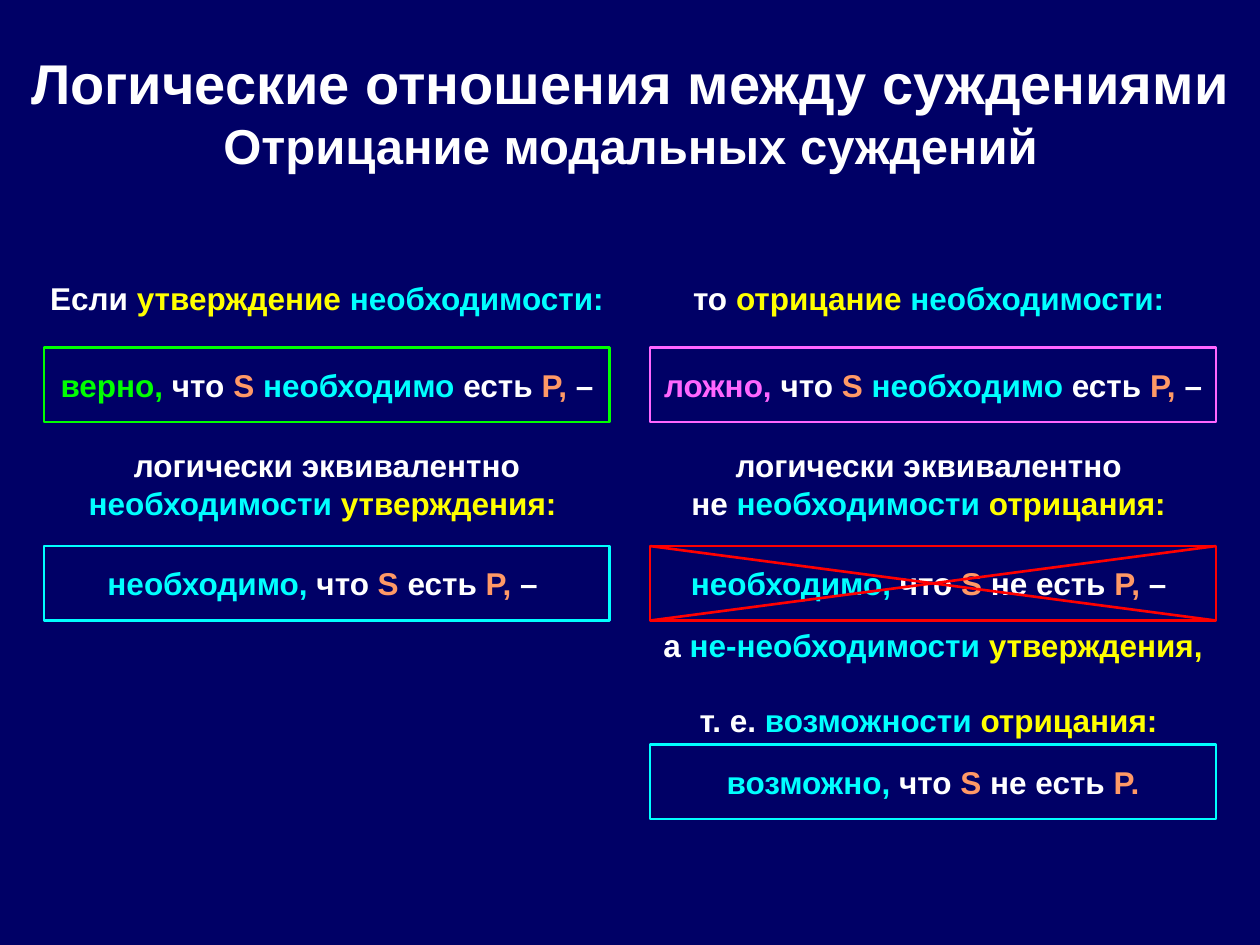
from dataclasses import dataclass
from itertools import accumulate
from typing import NamedTuple, Optional

from lxml import etree
from pptx import Presentation
from pptx.dml.color import RGBColor
from pptx.enum import shapes, text
from pptx.oxml import ns
from pptx.util import Inches, Pt

NAVY = RGBColor(0x00, 0x00, 0x66)
WHITE = RGBColor(0xFF, 0xFF, 0xFF)
YELLOW = RGBColor(0xFF, 0xFF, 0x00)
CYAN = RGBColor(0x00, 0xFF, 0xFF)
GREEN = RGBColor(0x00, 0xFF, 0x00)
PINK = RGBColor(0xFF, 0x66, 0xFF)
ORANGE = RGBColor(0xFF, 0x99, 0x66)
RED = RGBColor(0xFF, 0x00, 0x00)

COLUMN_LEFTS = (0.35, 5.16)
COLUMN_WIDTH = 4.49
GRID_TOP = 1.97
ROW_UNIT = 0.197
ROW_HEIGHTS = [units * ROW_UNIT for units in (4, 3, 5, 3, 5, 3)]
ROW_TOPS = list(accumulate(ROW_HEIGHTS, initial=GRID_TOP))


class Span(NamedTuple):
    text: str
    color: RGBColor
    size: Optional[int] = None


class Area(NamedTuple):
    left: float
    top: float
    width: float
    height: float


@dataclass(frozen=True)
class Cell:
    column: int
    row: int
    spans: tuple[Span, ...]
    border: Optional[RGBColor] = None
    bleed: float = 0
    crossed: bool = False

    @property
    def area(self) -> Area:
        return Area(COLUMN_LEFTS[self.column] - self.bleed, ROW_TOPS[self.row],
                    COLUMN_WIDTH + 2 * self.bleed, ROW_HEIGHTS[self.row])


def necessity(verdict: str, color: RGBColor) -> tuple[Span, ...]:
    return (Span(verdict, color), Span(" что ", WHITE), Span("S", ORANGE),
            Span(" необходимо ", CYAN), Span("есть ", WHITE),
            Span("P, ", ORANGE), Span("–", WHITE))


def modality(mode: str, link: str, predicate: str, ending: str = "") -> tuple[Span, ...]:
    spans = (Span(mode, CYAN), Span("что", WHITE), Span(" S ", ORANGE),
             Span(link, WHITE), Span(predicate, ORANGE))
    return spans + ((Span(ending, WHITE),) if ending else ())


TITLE = (Span("Логические отношения между суждениями\n", WHITE, 32),
         Span("Отрицание модальных суждений", WHITE, 28))

CELLS = (
    Cell(0, 0, (Span("Если ", WHITE), Span("утверждение ", YELLOW),
                Span("необходимости: ", CYAN)), bleed=0.08),
    Cell(0, 1, necessity("верно,", GREEN), GREEN),
    Cell(0, 2, (Span("логически эквивалентно ", WHITE), Span("необходимости ", CYAN),
                Span("утверждения: ", YELLOW))),
    Cell(0, 3, modality("необходимо, ", "есть ", "P, ", "– "), CYAN),
    Cell(1, 0, (Span("то ", WHITE), Span("отрицание ", YELLOW),
                Span("необходимости: ", CYAN))),
    Cell(1, 1, necessity("ложно,", PINK), PINK),
    Cell(1, 2, (Span("логически эквивалентно \nне ", WHITE),
                Span("необходимости ", CYAN), Span("отрицания: ", YELLOW))),
    Cell(1, 3, modality("необходимо, ", "не есть ", "P, ", "– "), RED, crossed=True),
    Cell(1, 4, (Span("а ", WHITE), Span("не-необходимости ", CYAN),
                Span("утверждения, \n", YELLOW), Span("т. е. ", WHITE),
                Span("возможности ", CYAN), Span("отрицания: ", YELLOW))),
    Cell(1, 5, modality("возможно, ", "не есть ", "P."), CYAN),
)


def write(box, spans: tuple[Span, ...], wrap: bool) -> None:
    frame = box.text_frame
    frame.word_wrap = wrap
    frame.vertical_anchor = text.MSO_ANCHOR.MIDDLE
    para = frame.paragraphs[0]
    para.alignment = text.PP_ALIGN.CENTER
    para.font.name = "Arial"
    para.font.size = Pt(18)
    para.font.bold = True
    for span in spans:
        for index, piece in enumerate(span.text.split("\n")):
            if index:
                para.add_line_break()
            if piece:
                run = para.add_run()
                run.text = piece
                run.font.color.rgb = span.color
                if span.size:
                    run.font.size = Pt(span.size)


def add_text(page, area: Area, spans: tuple[Span, ...]) -> None:
    write(page.shapes.add_textbox(*map(Inches, area)), spans, True)


def add_frame(page, cell: Cell) -> None:
    box = page.shapes.add_shape(shapes.MSO_SHAPE.RECTANGLE, *map(Inches, cell.area))
    box.shadow.inherit = False
    box.fill.background()
    box.line.color.rgb = cell.border
    box.line.width = Pt(1.5)
    write(box, cell.spans, False)


def add_cross(page, area: Area, color: RGBColor) -> None:
    right, bottom = area.left + area.width, area.top + area.height
    for start, end in ((area.top, bottom), (bottom, area.top)):
        stroke = page.shapes.add_connector(
            shapes.MSO_CONNECTOR.STRAIGHT,
            *map(Inches, (area.left, start, right, end)))
        stroke.line.color.rgb = color
        stroke.line.width = Pt(1.5)
        etree.SubElement(stroke._element.spPr, ns.qn("a:effectLst"))


def main() -> None:
    deck = Presentation()
    deck.slide_width, deck.slide_height = Inches(10), Inches(7.5)
    page = deck.slides.add_slide(deck.slide_layouts[6])
    page.background.fill.solid()
    page.background.fill.fore_color.rgb = NAVY
    add_text(page, Area(0.11, 0.26, 9.79, 1.25), TITLE)
    for cell in CELLS:
        if cell.border is None:
            add_text(page, cell.area, cell.spans)
        else:
            add_frame(page, cell)
        if cell.crossed:
            add_cross(page, cell.area, cell.border)
    deck.save("out.pptx")


if __name__ == "__main__":
    main()
